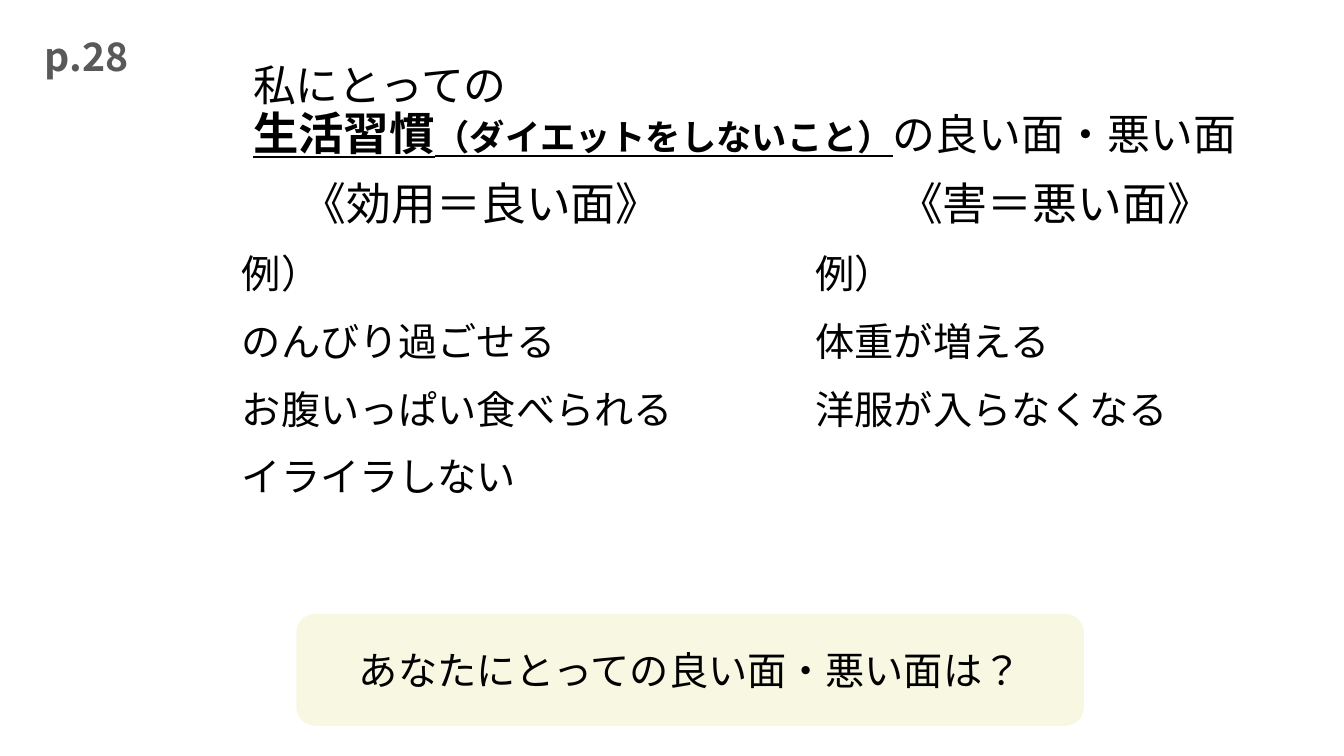
from pptx import Presentation
from pptx.dml.color import RGBColor
from pptx.enum.lang import MSO_LANGUAGE_ID as Language
from pptx.enum.shapes import MSO_SHAPE as Shape
from pptx.enum.text import MSO_ANCHOR as Anchor, MSO_AUTO_SIZE as AutoSize, PP_ALIGN as Align
from pptx.oxml.ns import qn
from pptx.util import Inches, Pt
from lxml.etree import SubElement

THEME = {
    "font": "Noto Sans CJK JP",
    "text": RGBColor(0x00, 0x00, 0x00),
    "page": RGBColor(0x59, 0x59, 0x59),
    "panel": RGBColor(0xFF, 0xFF, 0xFF),
    "callout": RGBColor(0xF7, 0xF7, 0xE2),
    "title_size": 30.6,
    "habit_size": 32.4,
    "example_size": 25.2,
    "heading_size": 32,
    "body_size": 28,
    "line_spacing": 0.9,
    "gap": Pt(18),
}
MARKED = {"bold": True, "underline": True}

TITLE_LINES = [
    [("私にとっての", "title_size", {})],
    [
        ("生活習慣", "habit_size", MARKED),
        ("（ダイエットをしないこと）", "example_size", MARKED),
        ("の良い面・悪い面", "title_size", {}),
    ],
]
COLUMNS = [
    ("《効用＝良い面》", ["例）", "のんびり過ごせる", "お腹いっぱい食べられる", "イライラしない"]),
    ("《害＝悪い面》", ["例）", "体重が増える", "洋服が入らなくなる"]),
]
QUESTION = "あなたにとっての良い面・悪い面は？"
PAGE = "p.28"

TITLE_BOX = (2.41, 0.33, 10.06, 1.31)
COLUMN_BOX = (2.25, 1.75, 5, 3.61)
COLUMN_STEP = 5.69
QUESTION_BOX = (2.94, 6.09, 7.81, 1.11)
PAGE_BOX = (0.13, 0.13, 1.46, 0.85)


def place(shape, box):
    for side, length in zip(("left", "top", "width", "height"), box):
        setattr(shape, side, Inches(length))


def set_frame(frame, anchor):
    settings = {"word_wrap": True, "auto_size": AutoSize.NONE, "vertical_anchor": anchor}
    for name, value in settings.items():
        setattr(frame, name, value)


def add_run(paragraph, words, size, color="text", **marks):
    """Add a run in the theme font, for Latin and East Asian letters alike."""
    run = paragraph.add_run()
    run.text = words
    settings = {
        "name": THEME["font"],
        "size": Pt(THEME[size]),
        "bold": False,
        "language_id": Language.JAPANESE,
        **marks,
    }
    for name, value in settings.items():
        setattr(run.font, name, value)
    run.font.color.rgb = THEME[color]
    SubElement(run.font._element, qn("a:ea"), typeface=THEME["font"])


def fill_title(title):
    place(title, TITLE_BOX)
    set_frame(title.text_frame, Anchor.BOTTOM)
    paragraph = title.text_frame.paragraphs[0]
    paragraph.alignment = Align.LEFT
    paragraph.line_spacing = THEME["line_spacing"]
    for number, line in enumerate(TITLE_LINES):
        if number:
            paragraph.add_line_break()
        for words, size, marks in line:
            add_run(paragraph, words, size, **marks)


def fill_column(column, heading, examples):
    column.fill.solid()
    column.fill.fore_color.rgb = THEME["panel"]
    frame = column.text_frame
    set_frame(frame, Anchor.TOP)
    for number, words in enumerate([heading, *examples]):
        paragraph = frame.add_paragraph() if number else frame.paragraphs[0]
        properties = paragraph._p.get_or_add_pPr()
        properties.set("marL", str(Inches(0.05)))
        properties.set("indent", "0")
        SubElement(properties, qn("a:buNone"))
        paragraph.alignment = Align.LEFT if number else Align.CENTER
        paragraph.line_spacing = THEME["line_spacing"]
        paragraph.space_before = THEME["gap"] if number else Pt(0)
        add_run(paragraph, words, "body_size" if number else "heading_size")


def fill_label(label, words, color="text", **marks):
    set_frame(label.text_frame, Anchor.MIDDLE)
    paragraph = label.text_frame.paragraphs[0]
    paragraph.alignment = Align.CENTER
    add_run(paragraph, words, "body_size", color, **marks)


def main():
    deck = Presentation()
    deck.slide_width, deck.slide_height = Inches(13.33), Inches(7.5)
    slide = deck.slides.add_slide(deck.slide_layouts.get_by_name("Two Content"))

    fill_title(slide.shapes.title)

    left, *rest = COLUMN_BOX
    for number, (heading, examples) in enumerate(COLUMNS):
        column = slide.placeholders[number + 1]
        place(column, (left + number * COLUMN_STEP, *rest))
        fill_column(column, heading, examples)

    question = slide.shapes.add_shape(Shape.ROUNDED_RECTANGLE, *map(Inches, QUESTION_BOX))
    question.shadow.inherit = False
    question.fill.solid()
    question.fill.fore_color.rgb = THEME["callout"]
    question.line.fill.background()
    fill_label(question, QUESTION)

    page = slide.shapes.add_textbox(*map(Inches, PAGE_BOX))
    fill_label(page, PAGE, "page", bold=True)

    deck.save("out.pptx")


if __name__ == "__main__":
    main()
